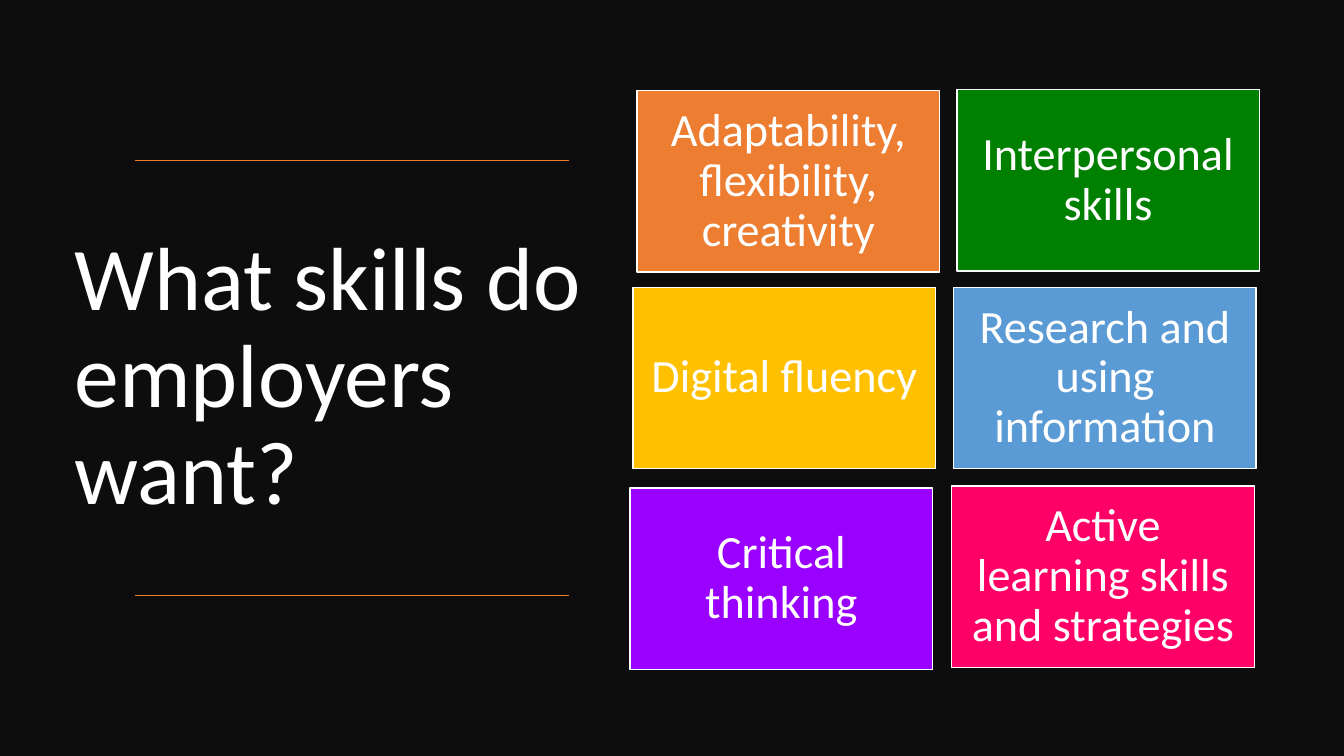
from dataclasses import dataclass

from lxml import etree
from pptx import Presentation
from pptx.dml.color import RGBColor
from pptx.enum.shapes import MSO_CONNECTOR, MSO_SHAPE
from pptx.enum.text import MSO_ANCHOR, MSO_AUTO_SIZE, PP_ALIGN
from pptx.oxml.ns import qn
from pptx.slide import Slide
from pptx.text.text import TextFrame
from pptx.util import Inches, Pt

RECTANGLE = MSO_SHAPE.RECTANGLE
STRAIGHT = MSO_CONNECTOR.STRAIGHT
MIDDLE = MSO_ANCHOR.MIDDLE
NO_AUTOFIT = MSO_AUTO_SIZE.NONE
LEFT, CENTER = PP_ALIGN.LEFT, PP_ALIGN.CENTER

BLACK = RGBColor(0x0D, 0x0D, 0x0D)
WHITE = RGBColor(0xFF, 0xFF, 0xFF)
ORANGE = RGBColor(0xED, 0x7D, 0x31)
GREEN = RGBColor(0x00, 0x80, 0x00)
GOLD = RGBColor(0xFF, 0xC0, 0x00)
BLUE = RGBColor(0x5B, 0x9B, 0xD5)
PURPLE = RGBColor(0x99, 0x00, 0xFF)
PINK = RGBColor(0xFF, 0x00, 0x66)

FONT = "Calibri"
CARD_WIDTH, CARD_HEIGHT = Inches(3), Inches(1.8)
CARD_INSET = Inches(0.14)
RULE_LEFT, RULE_RIGHT = Inches(1.34), Inches(5.64)
RULE_TOPS = (1.59, 5.91)


@dataclass
class Card:
    text: str
    left: float
    top: float
    color: RGBColor


CARDS = [
    Card("Adaptability, flexibility, creativity", 6.32, 0.9, ORANGE),
    Card("Interpersonal skills", 9.49, 0.89, GREEN),
    Card("Digital fluency", 6.28, 2.85, GOLD),
    Card("Research and using information", 9.46, 2.85, BLUE),
    Card("Critical thinking", 6.25, 4.84, PURPLE),
    Card("Active learning skills and strategies", 9.44, 4.82, PINK),
]


def set_text(tf: TextFrame, text: str, size: int, align: PP_ALIGN) -> None:
    tf.text = text
    tf.word_wrap = True
    tf.auto_size = NO_AUTOFIT
    tf.vertical_anchor = MIDDLE
    p = tf.paragraphs[0]
    p.alignment = align
    p.line_spacing = 0.9
    font = p.runs[0].font
    font.name = FONT
    font.size = Pt(size)
    font.color.rgb = WHITE


def add_rule(s: Slide, top: float) -> None:
    line = s.shapes.add_connector(STRAIGHT, RULE_RIGHT, Inches(top), RULE_LEFT, Inches(top))
    line.line.color.rgb = ORANGE
    line.line.width = Pt(1)
    etree.SubElement(line.element.spPr, qn("a:effectLst"))


def add_card(s: Slide, card: Card) -> None:
    sp = s.shapes.add_shape(
        RECTANGLE, Inches(card.left), Inches(card.top), CARD_WIDTH, CARD_HEIGHT
    )
    sp.shadow.inherit = False
    sp.fill.solid()
    sp.fill.fore_color.rgb = card.color
    sp.line.color.rgb = WHITE
    sp.line.width = Pt(1)
    tf = sp.text_frame
    tf.margin_left = tf.margin_right = CARD_INSET
    tf.margin_top = tf.margin_bottom = CARD_INSET
    set_text(tf, card.text, 33, CENTER)


def main() -> None:
    prs = Presentation()
    prs.slide_width, prs.slide_height = Inches(13.33), Inches(7.5)
    s = prs.slides.add_slide(prs.slide_layouts[5])

    title = s.shapes.title
    title.left, title.top = Inches(0.64), Inches(1.59)
    title.width, title.height = Inches(5.39), Inches(4.33)
    set_text(title.text_frame, "What skills do employers want?", 64, LEFT)

    backdrop = s.shapes.add_shape(RECTANGLE, 0, 0, prs.slide_width, prs.slide_height)
    backdrop.shadow.inherit = False
    backdrop.fill.solid()
    backdrop.fill.fore_color.rgb = BLACK
    backdrop.line.fill.background()
    title.element.addprevious(backdrop.element)

    for top in RULE_TOPS:
        add_rule(s, top)
    for card in CARDS:
        add_card(s, card)

    prs.save("out.pptx")


if __name__ == "__main__":
    main()
